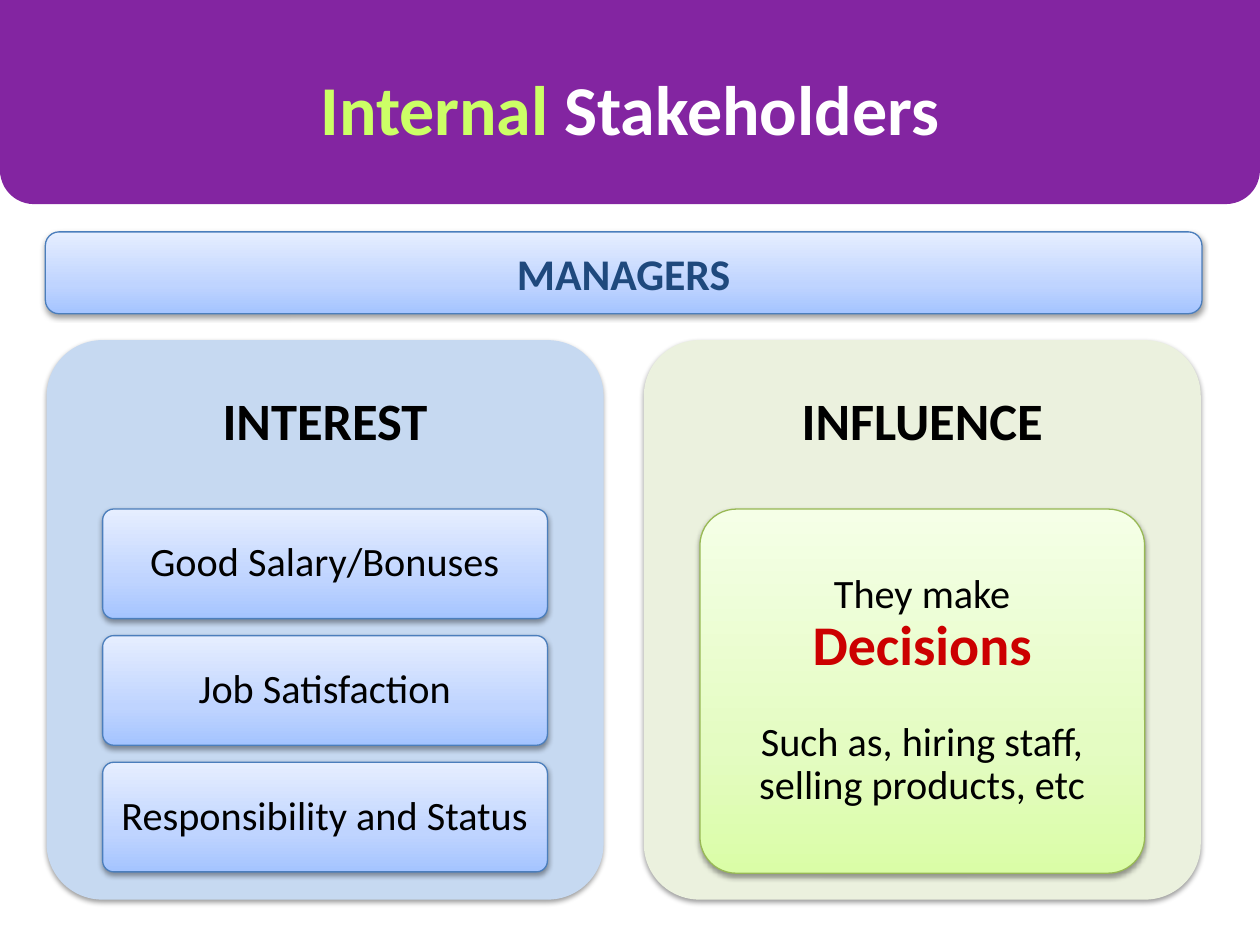
from copy import deepcopy
from typing import NamedTuple

from lxml.etree import SubElement
from pptx import Presentation
from pptx.dml.color import RGBColor
from pptx.enum.shapes import MSO_SHAPE
from pptx.enum.text import MSO_ANCHOR, PP_ALIGN
from pptx.oxml.ns import qn
from pptx.util import Inches, Pt


class Box(NamedTuple):
    left: float
    top: float
    width: float
    height: float


class Run(NamedTuple):
    text: str
    size: float
    color: str = "000000"
    bold: bool = False


class Line(NamedTuple):
    runs: list[Run]
    before: float = 0


class Style(NamedTuple):
    stops: list[tuple[float, str]]
    line: str


class Panel(NamedTuple):
    title: str
    left: float
    fill: str
    style: Style
    card_height: float
    cards: list[list[Line]]


BLUE = Style([(0, "A4C4FF"), (0.35, "BFD4FF"), (1, "E6EEFF")], "4B7EBC")
GREEN = Style([(0, "DAFDA7"), (0.35, "E4FCC2"), (1, "F5FFE7")], "98B955")
PURPLE = "8325A1"
CARD_STEP = 1.005
INTERESTS = ["Good Salary/Bonuses", "Job Satisfaction", "Responsibility and Status"]
DECISIONS = [
    Line([Run("They make", 23)]),
    Line([Run("Decisions", 32, "CC0000", True)]),
    Line([Run("Such as, hiring staff, selling products, etc", 23)], 25),
]
PANELS = [
    Panel("INTEREST", 0.37, "C6D9F1", BLUE, 0.87,
          [[Line([Run(text, 23)])] for text in INTERESTS]),
    Panel("INFLUENCE", 5.11, "EBF1DE", GREEN, 2.89, [DECISIONS]),
]


def rgb(value: str) -> RGBColor:
    return RGBColor.from_string(value)


def emu(box: Box) -> list[int]:
    return [Inches(v) for v in box]


def add_shadow(s) -> None:
    effects = s._element.spPr.find(qn("a:effectLst"))
    shadow = SubElement(effects, qn("a:outerShdw"), blurRad=str(Pt(3.1)),
                        dist=str(Pt(1.6)), dir="5400000", rotWithShape="0")
    color = SubElement(shadow, qn("a:srgbClr"), val="000000")
    SubElement(color, qn("a:alpha"), val="38000")


def add_solid(slide, box: Box, fill: str, kind=MSO_SHAPE.ROUNDED_RECTANGLE,
              adjust: float | None = None, shadow: bool = False):
    s = slide.shapes.add_shape(kind, *emu(box))
    s.shadow.inherit = False
    if adjust is not None:
        s.adjustments[0] = adjust
    s.fill.solid()
    s.fill.fore_color.rgb = rgb(fill)
    s.line.fill.background()
    if shadow:
        add_shadow(s)
    return s


def add_glossy(slide, box: Box, style: Style, adjust: float | None = None):
    s = add_solid(slide, box, style.stops[0][1], adjust=adjust, shadow=True)
    s.fill.gradient()
    s.fill.gradient_angle = 90
    stop_list = s._element.spPr.find(f".//{qn('a:gsLst')}")
    stop_list.append(deepcopy(stop_list[0]))
    for stop, (position, color) in zip(s.fill.gradient_stops, style.stops):
        stop.position = position
        stop.color.rgb = rgb(color)
    s.line.color.rgb = rgb(style.line)
    s.line.width = Pt(0.75)
    return s


def write(s, lines: list[Line], spacing: float = 1.0, anchor=MSO_ANCHOR.MIDDLE,
          inset: float = 0.1) -> None:
    tf = s.text_frame
    frame = {"word_wrap": True, "vertical_anchor": anchor,
             "margin_left": Inches(inset), "margin_right": Inches(inset)}
    for name, value in frame.items():
        setattr(tf, name, value)
    for i, line in enumerate(lines):
        p = tf.add_paragraph() if i else tf.paragraphs[0]
        p.alignment = PP_ALIGN.CENTER
        p.line_spacing = spacing
        p.space_before = Pt(line.before)
        for run in line.runs:
            r = p.add_run()
            r.text = run.text
            r.font.color.rgb = rgb(run.color)
            font = {"name": "Calibri", "size": Pt(run.size), "bold": run.bold}
            for name, value in font.items():
                setattr(r.font, name, value)


def add_panel(slide, panel: Panel) -> None:
    add_solid(slide, Box(panel.left, 2.7, 4.42, 4.44), panel.fill, adjust=0.1, shadow=True)
    title = slide.shapes.add_textbox(*emu(Box(panel.left, 2.7, 4.42, 1.33)))
    write(title, [Line([Run(panel.title, 30, bold=True)])], 0.9, inset=0.12)
    for i, lines in enumerate(panel.cards):
        box = Box(panel.left + 0.445, 4.04 + i * CARD_STEP, 3.53, panel.card_height)
        write(add_glossy(slide, box, panel.style, 0.1), lines, 0.9)


def add_header(slide) -> None:
    add_solid(slide, Box(0, 0, 10, 1.62), PURPLE, adjust=0.167)
    add_solid(slide, Box(0, 0, 10, 1.15), PURPLE, MSO_SHAPE.RECTANGLE)
    title = slide.shapes.add_textbox(*emu(Box(0, 0.47, 10, 0.77)))
    runs = [Run("Internal", 40, "CCFF66", True), Run(" Stakeholders", 40, "FFFFFF", True)]
    write(title, [Line(runs)], anchor=MSO_ANCHOR.TOP)


def main() -> None:
    """Build the internal stakeholders slide."""
    prs = Presentation()
    prs.slide_width, prs.slide_height = Inches(10), Inches(7.5)
    slide = prs.slides.add_slide(prs.slide_layouts[6])
    for panel in PANELS:
        add_panel(slide, panel)
    banner = add_glossy(slide, Box(0.36, 1.84, 9.18, 0.65), BLUE)
    write(banner, [Line([Run("MANAGERS", 25, "1F497D", True)])])
    add_header(slide)
    prs.save("out.pptx")


if __name__ == "__main__":
    main()
